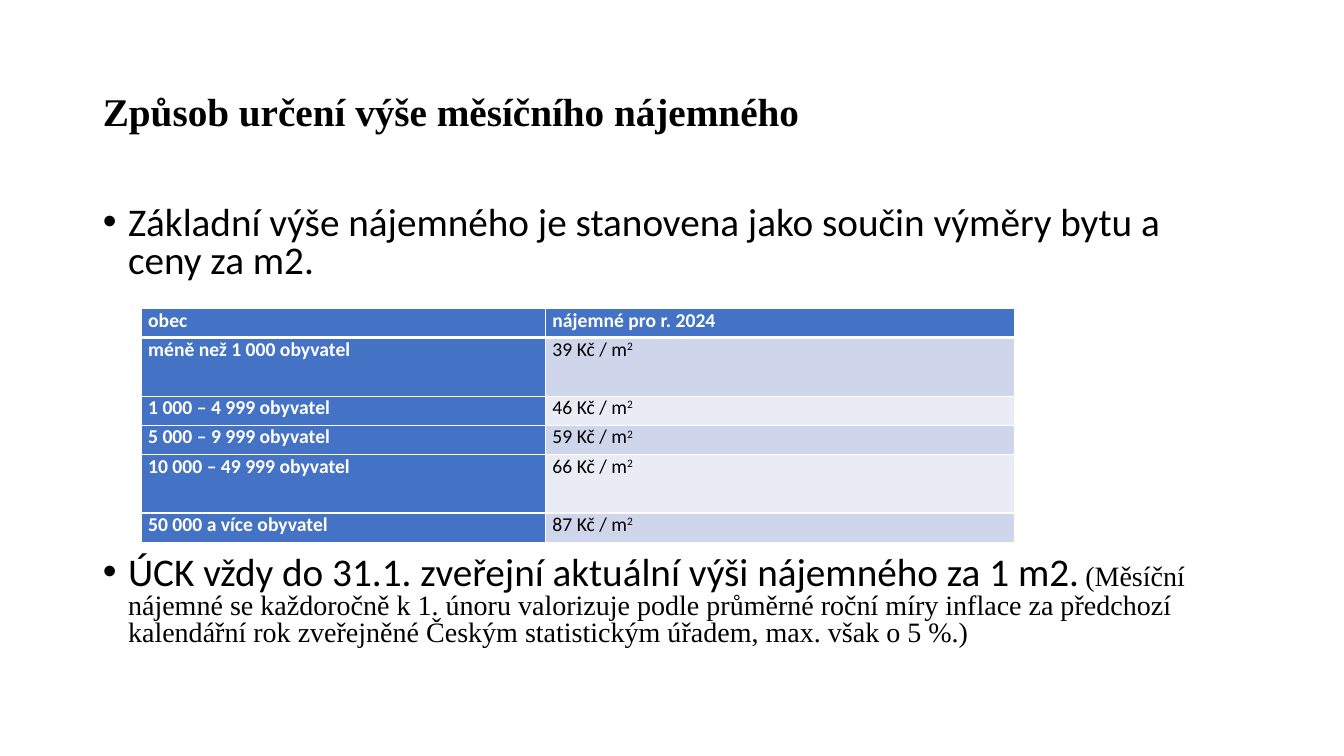
from dataclasses import dataclass

from pptx import Presentation
from pptx import util as u
from pptx.dml.color import RGBColor
from pptx.enum import text as t
from pptx.oxml import parse_xml
from pptx.oxml.ns import nsdecls


@dataclass(frozen=True)
class Theme:
    """Colours, fonts and type sizes of the slide."""
    ink: str = "000000"
    white: str = "FFFFFF"
    blue: str = "4472C4"
    bands: tuple = ("CFD5EA", "E9EBF5")
    sans: str = "Calibri"
    serif: str = "Times New Roman"
    large: int = 28
    note: int = 20
    space: int = 18
    small: int = 14


THEME = Theme()
TITLE = "Způsob určení výše měsíčního nájemného"
RULE = "Základní výše nájemného je stanovena jako součin výměry bytu a ceny za m2."
NEWS = "ÚCK vždy do 31.1. zveřejní aktuální výši nájemného za 1 m2."
NOTE = ("(Měsíční nájemné se každoročně k 1. únoru valorizuje podle průměrné "
        "roční míry inflace za předchozí kalendářní rok zveřejněné Českým "
        "statistickým úřadem, max. však o 5 %.)")
HEADS = ("obec", "nájemné pro r. 2024")
RENTS = (
    ("méně než 1 000 obyvatel", 39, 0.58),
    ("1 000 – 4 999 obyvatel", 46, 0.29),
    ("5 000 – 9 999 obyvatel", 59, 0.29),
    ("10 000 – 49 999 obyvatel", 66, 0.58),
    ("50 000 a více obyvatel", 87, 0.29),
)


def place(shape, left, top, width, height):
    """Move and size a shape, in inches."""
    shape.left, shape.top = u.Inches(left), u.Inches(top)
    shape.width, shape.height = u.Inches(width), u.Inches(height)


def style(run, size, font=THEME.sans, color=THEME.ink, bold=False):
    """Format one run."""
    run.font.size = u.Pt(size)
    run.font.name = font
    run.font.bold = bold
    run.font.color.rgb = RGBColor.from_string(color)


def add_run(para, words, *look):
    """Append a formatted run to a paragraph."""
    run = para.add_run()
    run.text = words
    style(run, *look)
    return run


def set_title(shape):
    """Fill the title placeholder."""
    place(shape, 0.92, 0.4, 11.5, 1.45)
    frame = shape.text_frame
    frame.text = TITLE
    frame.auto_size = t.MSO_AUTO_SIZE.NONE
    frame.vertical_anchor = t.MSO_ANCHOR.MIDDLE
    para = frame.paragraphs[0]
    para.alignment = t.PP_ALIGN.LEFT
    para.line_spacing = 0.9
    style(para.runs[0], THEME.large, THEME.serif, THEME.ink, True)


def set_item(para, words, before):
    """Fill a bulleted paragraph."""
    para.text = words
    para.line_spacing = 0.8
    para.space_before = u.Pt(before)
    props = para._p.get_or_add_pPr()
    props.set("marL", str(u.Inches(0.25)))
    props.set("indent", str(u.Inches(-0.25)))
    style(para.runs[0], THEME.large)


def set_body(shape):
    """Fill the list, leaving room for the table between its items."""
    place(shape, 0.92, 2, 11.5, 4.76)
    frame = shape.text_frame
    frame.auto_size = t.MSO_AUTO_SIZE.NONE
    set_item(frame.paragraphs[0], RULE, 10)
    last = frame.add_paragraph()
    set_item(last, NEWS, 196)
    add_run(last, " ", THEME.space, THEME.serif)
    add_run(last, NOTE, THEME.note, THEME.serif)


def set_edges(cell, top, bottom):
    """Draw white cell borders with the given top and bottom widths."""
    props = cell._tc.get_or_add_tcPr()
    edges = (("lnL", 1), ("lnR", 1), ("lnT", top), ("lnB", bottom))
    for spot, (tag, width) in enumerate(edges):
        props.insert(spot, parse_xml(
            f'<a:{tag} {nsdecls("a")} w="{u.Pt(width)}"><a:solidFill>'
            f'<a:srgbClr val="{THEME.white}"/></a:solidFill></a:{tag}>'))


def set_cell(cell, words, fill, color, bold, top=1, bottom=1):
    """Fill one table cell and return its paragraph."""
    cell.fill.solid()
    cell.fill.fore_color.rgb = RGBColor.from_string(fill)
    cell.margin_left = cell.margin_right = u.Inches(0.07)
    cell.margin_top = cell.margin_bottom = 0
    set_edges(cell, top, bottom)
    para = cell.text_frame.paragraphs[0]
    para.text = words
    style(para.runs[0], THEME.small, THEME.sans, color, bold)
    return para


def add_rents(slide):
    """Add the table of rents by size of town."""
    box = [u.Inches(n) for n in (1.4, 3.06, 8.66, 2.32)]
    table = slide.shapes.add_table(len(RENTS) + 1, len(HEADS), *box).table
    for col, width in zip(table.columns, (4.01, 4.65)):
        col.width = u.Inches(width)
    table.rows[0].height = u.Inches(0.29)
    for col, head in enumerate(HEADS):
        set_cell(table.cell(0, col), head, THEME.blue, THEME.white, True, 1, 3)
    for row, (town, rent, height) in enumerate(RENTS, 1):
        table.rows[row].height = u.Inches(height)
        top = 3 if row == 1 else 1
        set_cell(table.cell(row, 0), town, THEME.blue, THEME.white, True, top)
        band = THEME.bands[(row - 1) % 2]
        para = set_cell(table.cell(row, 1), f"{rent} Kč / m", band,
                        THEME.ink, False, top)
        power = add_run(para, "2", THEME.small)
        power._r.get_or_add_rPr().set("baseline", "30000")


def main():
    """Build and save the slide."""
    deck = Presentation()
    deck.slide_width, deck.slide_height = u.Inches(13.33), u.Inches(7.5)
    slide = deck.slides.add_slide(deck.slide_layouts[1])
    set_title(slide.shapes.title)
    set_body(slide.placeholders[1])
    add_rents(slide)
    deck.save("out.pptx")


if __name__ == "__main__":
    main()
